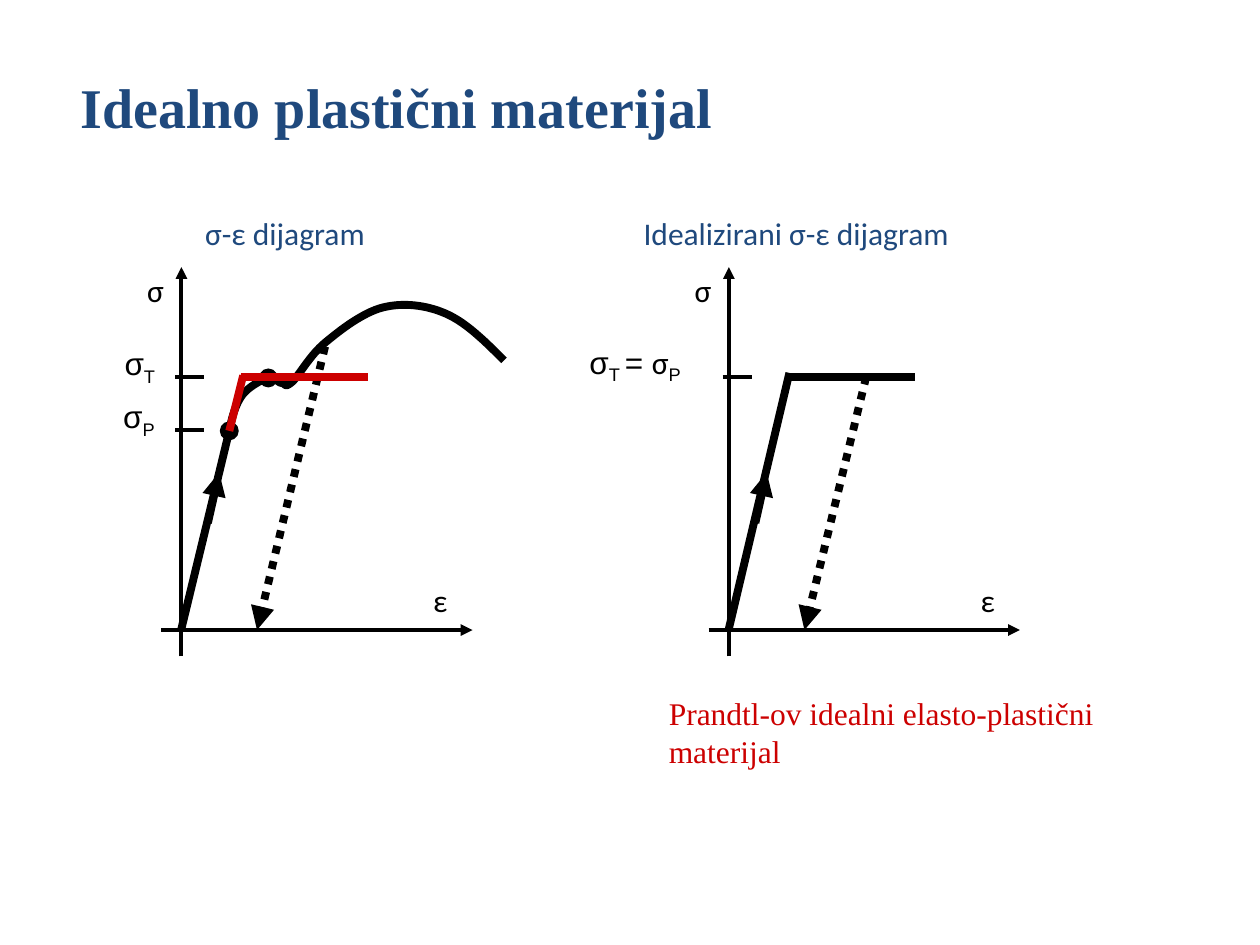
from dataclasses import dataclass
from typing import NamedTuple

from lxml.etree import SubElement
from pptx import Presentation
from pptx.dml.color import RGBColor
from pptx.enum.dml import MSO_LINE
from pptx.enum.shapes import MSO_CONNECTOR as Conn, MSO_SHAPE as Shape
from pptx.enum.text import MSO_ANCHOR as Anchor, MSO_AUTO_SIZE as AutoSize
from pptx.oxml.ns import qn
from pptx.util import Inches, Pt

COLS, ROWS = 100, 75
BLACK, BLUE, RED = "000000", "1F497D", "CC0000"
THIN, THICK = 2.25, 4.5
SERIF, SANS, ARIAL = "Times New Roman", "Calibri", "Arial"
AXIS_Y, YIELD_Y, LIMIT_Y = 50, 29.9, 34.15
RIGHT_X = 43.45

prs = Presentation()
prs.slide_width, prs.slide_height = Inches(10), Inches(7.5)


class Run(NamedTuple):
    text: str
    font: str = ARIAL
    sub: bool = False


@dataclass
class Label:
    col: float
    row: float
    cols: float
    rows: float
    runs: list[Run]
    color: str = BLACK
    size: float = 18
    bold: bool = False
    wrap: bool = False


@dataclass
class Stroke:
    x1: float
    y1: float
    x2: float
    y2: float
    width: float = THIN
    color: str = BLACK
    arrow: bool = False
    dotted: bool = False


def x(col: float) -> int:
    return round(prs.slide_width * col / COLS)


def y(row: float) -> int:
    return round(prs.slide_height * row / ROWS)


def rgb(color: str) -> RGBColor:
    return RGBColor.from_string(color)


def draw_label(s, label: Label, dx: float = 0) -> None:
    sp = s.shapes.add_textbox(x(label.col + dx), y(label.row), x(label.cols), y(label.rows))
    tf = sp.text_frame
    tf.word_wrap = label.wrap
    tf.auto_size = AutoSize.NONE if label.wrap else AutoSize.SHAPE_TO_FIT_TEXT
    tf.vertical_anchor = Anchor.MIDDLE if label.wrap else Anchor.TOP
    p = tf.paragraphs[0]
    p.font.size = Pt(label.size)
    p.font.bold = label.bold
    p.font.color.rgb = rgb(label.color)
    for run in label.runs:
        r = p.add_run()
        r.text = run.text
        r.font.name = run.font
        if run.sub:
            r._r.get_or_add_rPr().set("baseline", "-25000")


def draw_stroke(s, stroke: Stroke, dx: float = 0) -> None:
    sp = s.shapes.add_connector(
        Conn.STRAIGHT, x(stroke.x1 + dx), y(stroke.y1), x(stroke.x2 + dx), y(stroke.y2))
    sp.line.color.rgb = rgb(stroke.color)
    sp.line.width = Pt(stroke.width)
    if stroke.dotted:
        sp.line.dash_style = MSO_LINE.ROUND_DOT
    if stroke.arrow:
        SubElement(sp.line._get_or_add_ln(), qn("a:tailEnd"), type="triangle")
    SubElement(sp._element.spPr, qn("a:effectLst"))


def draw_dot(s, col: float, row: float, size: float = 1.4) -> None:
    sp = s.shapes.add_shape(
        Shape.OVAL, x(col - size / 2), y(row - size / 2), x(size), y(size))
    sp.shadow.inherit = False
    sp.fill.solid()
    sp.fill.fore_color.rgb = rgb(BLACK)
    sp.line.color.rgb = rgb(BLACK)
    sp.line.width = Pt(0.75)


def bezier(a: float, b: float, c: float, d: float, t: float) -> float:
    u = 1 - t
    return u**3 * a + 3 * u * u * t * b + 3 * u * t * t * c + t**3 * d


def draw_curve(s, points: list[tuple[float, float]], steps: int = 16) -> None:
    path_points = []
    for i in range(0, len(points) - 1, 3):
        cols, rows = zip(*points[i:i + 4])
        path_points += [(x(bezier(*cols, k / steps)), y(bezier(*rows, k / steps)))
                        for k in range(1, steps + 1)]
    builder = s.shapes.build_freeform(x(points[0][0]), y(points[0][1]))
    builder.add_line_segments(path_points, close=False)
    sp = builder.convert_to_shape()
    sp.shadow.inherit = False
    sp.fill.background()
    sp.line.color.rgb = rgb(BLACK)
    sp.line.width = Pt(THICK)


AXES = [
    Stroke(12.8, AXIS_Y, 37.5, AXIS_Y, arrow=True),
    Stroke(14.4, 52.1, 14.4, 21.2, arrow=True),
    Stroke(13.9, YIELD_Y, 16.2, YIELD_Y),
    Stroke(16.5, 41.5, 17.4, 37.5, THICK, arrow=True),
]
AXIS_LABELS = [
    Label(33.4, 45.6, 3.4, 5, [Run("ε", SANS)]),
    Label(10.7, 21, 3.8, 5, [Run("σ", SANS)]),
]
LABELS = [
    Label(5.4, 4.5, 90, 7.9, [Run("Idealno plastični materijal", SERIF)], BLUE, 32, True, True),
    Label(15.3, 16.1, 19.6, 4.7, [Run("σ-ε dijagram", SANS)], BLUE, wrap=True),
    Label(50.1, 16.1, 38.6, 4.7, [Run("Idealizirani σ-ε dijagram", SANS)], BLUE, wrap=True),
    Label(52.1, 54, 38.6, 8.2,
          [Run("Prandtl-ov idealni elasto-plastični materijal", SERIF)], RED, wrap=True),
    Label(8.8, 31, 5.3, 5, [Run("σ"), Run("P", sub=True)]),
    Label(8.9, 26.8, 4.6, 4, [Run("σ"), Run("T", sub=True)]),
    Label(45.8, 26.7, 9.7, 4,
          [Run("σ"), Run("T ", sub=True), Run("= "), Run("σ", SANS), Run("P", sub=True)]),
]
HARDENING = [
    (18.2, 34.2), (18.4, 33.1), (18.7, 32.1), (19.2, 31.4),
    (19.7, 30.7), (20.7, 30.2), (21.2, 30), (21.8, 29.8), (22, 30.4), (22.4, 30.4),
    (22.7, 30.5), (22.6, 30.8), (23.2, 30.3), (23.8, 29.7), (24.6, 28.2), (25.8, 27.2),
    (27, 26.2), (28.8, 24.8), (30.4, 24.4), (32, 24), (33.8, 24.2), (35.4, 24.9),
    (37, 25.6), (38.5, 27.1), (40, 28.6),
]
REAL = [
    Stroke(13.9, LIMIT_Y, 16.2, LIMIT_Y),
    Stroke(14.4, 49.9, 18.2, 34.2, THICK),
    Stroke(25.8, 27.5, 20.4, AXIS_Y, THICK, arrow=True, dotted=True),
    Stroke(18.2, 34.2, 19.3, 29.8, THICK, RED),
    Stroke(19.1, YIELD_Y, 29.2, YIELD_Y, THICK, RED),
]
IDEAL = [
    Stroke(14.4, 49.9, 19.2, 29.6, THICK),
    Stroke(25.3, YIELD_Y, 20.4, AXIS_Y, THICK, arrow=True, dotted=True),
    Stroke(19.1, YIELD_Y, 29.2, YIELD_Y, THICK),
]


def main() -> None:
    s = prs.slides.add_slide(prs.slide_layouts[6])
    for label in LABELS:
        draw_label(s, label)
    draw_curve(s, HARDENING)
    draw_dot(s, 21.3, 30)
    draw_dot(s, 18.2, 34.2)
    for dx, strokes in ((0, REAL), (RIGHT_X, IDEAL)):
        for label in AXIS_LABELS:
            draw_label(s, label, dx)
        for stroke in AXES + strokes:
            draw_stroke(s, stroke, dx)
    prs.save("out.pptx")


if __name__ == "__main__":
    main()
